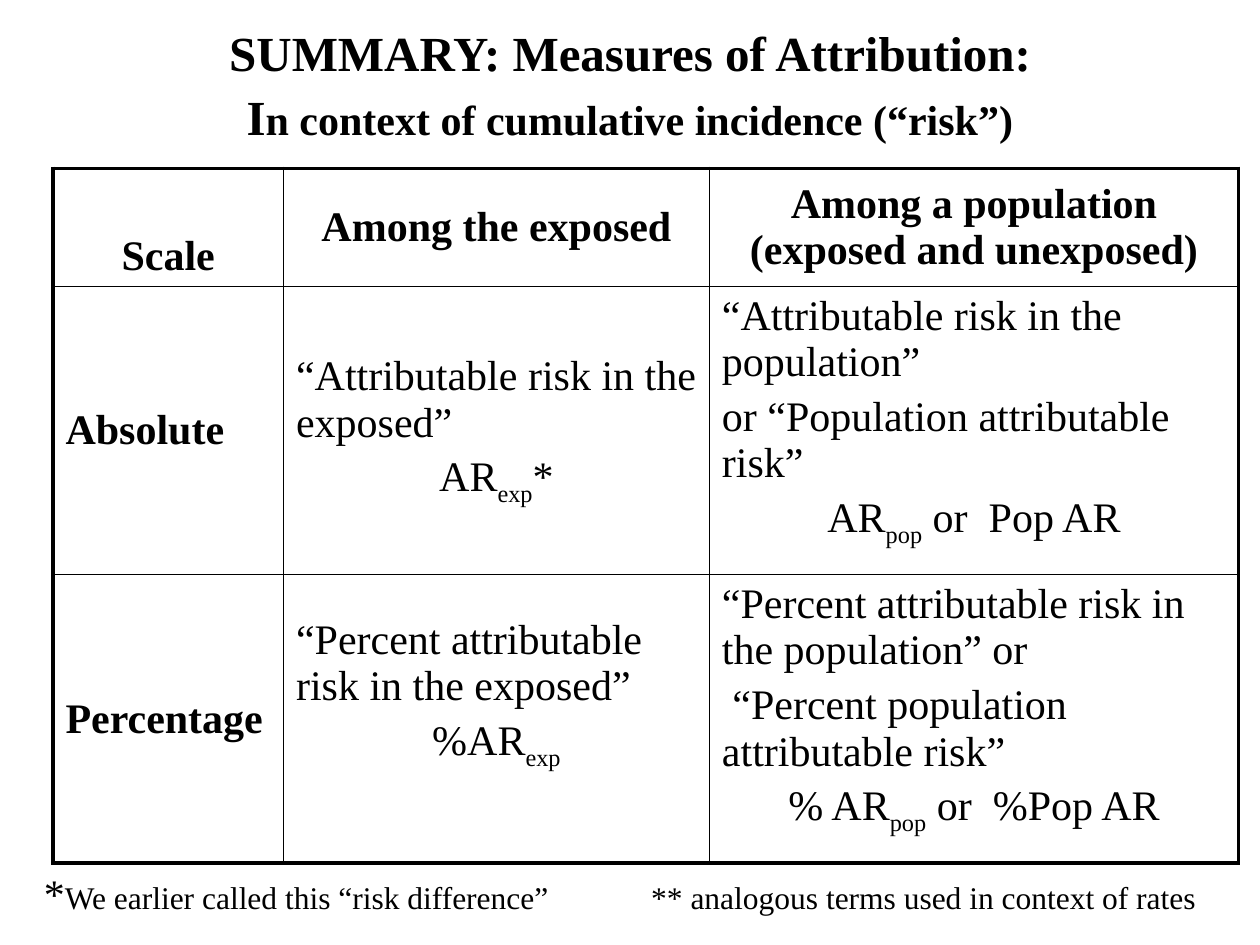
from lxml import etree
from pptx import Presentation
from pptx.dml.color import RGBColor
from pptx.enum.text import MSO_ANCHOR as Anchor, PP_ALIGN as Align
from pptx.oxml import parse_xml
from pptx.oxml.ns import nsdecls, qn
from pptx.util import Inches, Pt

FONT = "Times New Roman"
INK = "000000"
WIDTH, HEIGHT = Inches(10), Inches(7.5)
COLUMNS = (18.3, 33.8, 42)
ROWS = (12.5, 28.4, 28.4)
THIN, THICK = 1, 2.25
TERMS = [
    [["Scale"], ["Among the exposed"], ["Among a population (exposed and unexposed)"]],
    [["Absolute"],
     ["“Attributable risk in the exposed”", ("AR", "exp", "*")],
     ["“Attributable risk in the population”", "or “Population attributable risk”",
      ("AR", "pop", " or  Pop AR")]],
    [["Percentage"],
     ["“Percent attributable risk in the exposed”", ("%AR", "exp")],
     ["“Percent attributable risk in the population” or",
      " “Percent population attributable risk”",
      ("% AR", "pop", " or  %Pop AR")]],
]


def across(percent):
    return round(WIDTH * percent / 100)


def down(percent):
    return round(HEIGHT * percent / 100)


def color(hex_code):
    return RGBColor.from_string(hex_code)


def style(font, size, bold=False):
    font.name, font.size, font.bold = FONT, Pt(size), bold
    font.color.rgb = color(INK)


def add_text_frame(slide, left, top, width, height, anchor):
    frame = slide.shapes.add_textbox(
        across(left), down(top), across(width), down(height)).text_frame
    frame.word_wrap = True
    frame.vertical_anchor = anchor
    return frame


def add_run(paragraph, text, size, bold=False):
    run = paragraph.add_run()
    run.text = text
    style(run.font, size, bold)


def add_title(slide):
    heading = add_text_frame(slide, 0, 0.25, 100, 16.67, Anchor.MIDDLE).paragraphs[0]
    heading.alignment = Align.CENTER
    heading.line_spacing = 1.09
    add_run(heading, "SUMMARY: Measures of Attribution:", 28, True)
    heading.add_line_break()
    add_run(heading, "I", 28, True)
    add_run(heading, "n context of cumulative incidence (“risk”)", 24, True)


def set_borders(cell, row, column):
    last_row, last_column = len(ROWS) - 1, len(COLUMNS) - 1
    outer = {"L": column == 0, "R": column == last_column,
             "T": row == 0, "B": row == last_row}
    properties = cell._tc.get_or_add_tcPr()
    for position, (side, is_outer) in enumerate(outer.items()):
        width = Pt(THICK if is_outer else THIN)
        properties.insert(position, parse_xml(
            f'<a:ln{side} {nsdecls("a")} w="{width}"><a:solidFill>'
            f'<a:srgbClr val="{INK}"/></a:solidFill></a:ln{side}>'))


def write_term(paragraph, term, bold, centered):
    is_symbol = isinstance(term, tuple)
    for part, text in enumerate(term if is_symbol else (term,)):
        run = paragraph.add_run()
        run.text = text
        if part == 1:
            run.font._element.set("baseline", "-25000")
    paragraph.alignment = Align.CENTER if centered or is_symbol else Align.LEFT
    style(paragraph.font, 24, bold)


def fill_cell(cell, terms, row, column):
    cell.fill.background()
    cell.vertical_anchor = Anchor.TOP if row and column == 2 else Anchor.MIDDLE
    frame = cell.text_frame
    for number, term in enumerate(terms):
        paragraph = frame.add_paragraph() if number else frame.paragraphs[0]
        if number:
            paragraph.space_before = Pt(4.8)
        write_term(paragraph, term, row == 0 or column == 0, row == 0)
    set_borders(cell, row, column)


def add_measures(slide):
    table = slide.shapes.add_table(
        len(ROWS), len(COLUMNS), across(4.2), down(17.8),
        across(sum(COLUMNS)), down(sum(ROWS))).table
    for column, share in zip(table.columns, COLUMNS):
        column.width = across(share)
    for row, share in zip(table.rows, ROWS):
        row.height = down(share)
    for row, row_terms in enumerate(TERMS):
        for column, terms in enumerate(row_terms):
            fill_cell(table.cell(row, column), terms, row, column)
    table.cell(0, 0).vertical_anchor = Anchor.BOTTOM
    table.cell(2, 1).margin_bottom = down(5.9)


def add_footnotes(slide):
    note = add_text_frame(slide, 2.5, 91.1, 95.8, 6.8, Anchor.TOP).paragraphs[0]
    stops = etree.SubElement(note._p.get_or_add_pPr(), qn("a:tabLst"))
    etree.SubElement(stops, qn("a:tab"), pos=str(across(48.2)), algn="l")
    add_run(note, "*", 24)
    add_run(note, "We earlier called this “risk difference”\t"
                  "** analogous terms used in context of rates", 18)


def main():
    deck = Presentation()
    deck.slide_width, deck.slide_height = WIDTH, HEIGHT
    slide = deck.slides.add_slide(deck.slide_layouts[6])
    add_title(slide)
    add_measures(slide)
    add_footnotes(slide)
    deck.save("out.pptx")


if __name__ == "__main__":
    main()
